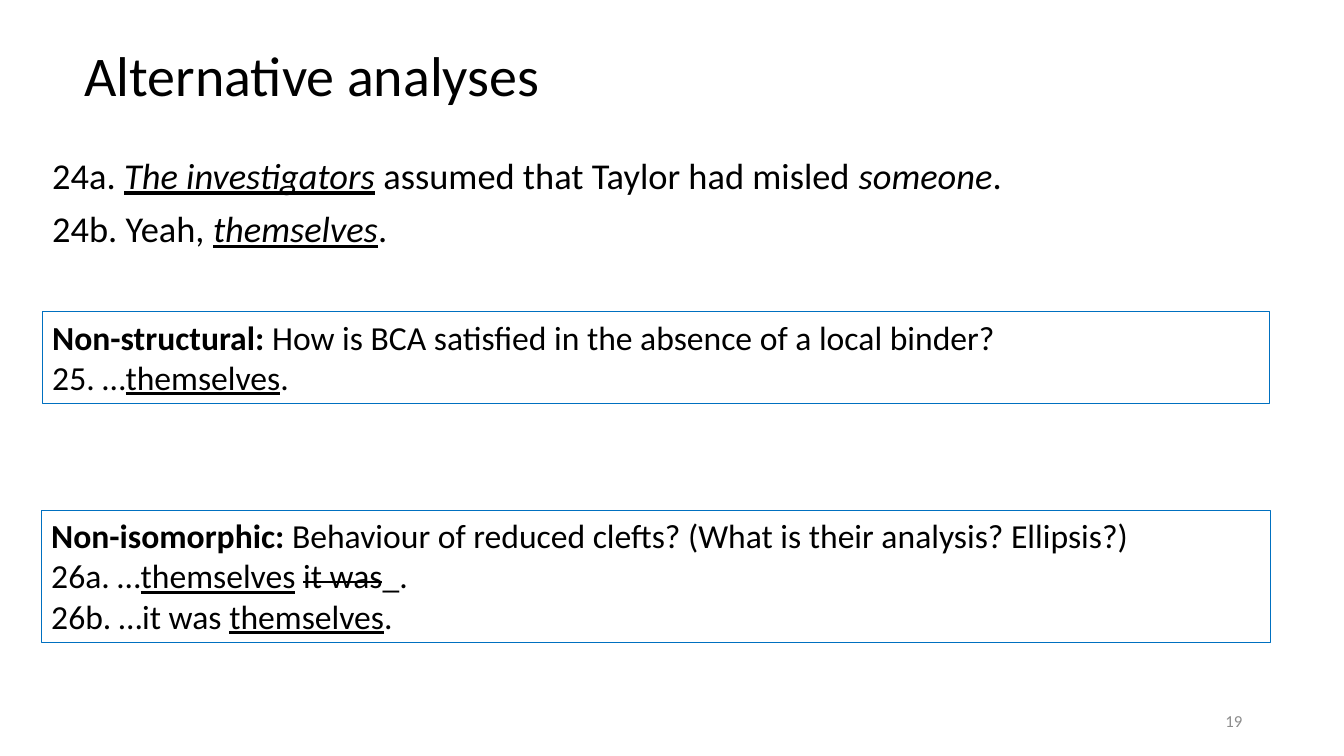
from dataclasses import dataclass
from typing import NamedTuple

from pptx import Presentation
from pptx.dml.color import RGBColor
from pptx.enum.shapes import MSO_SHAPE
from pptx.enum.text import MSO_ANCHOR as Anchor, PP_ALIGN as Align
from pptx.util import Emu, Pt

EMU_PER_PX = 9144  # 100 px to the inch


@dataclass(frozen=True)
class Theme:
    font: str = "Calibri"
    ink: RGBColor = RGBColor(0x00, 0x00, 0x00)
    muted: RGBColor = RGBColor(0x8C, 0x8C, 0x8C)
    outline: RGBColor = RGBColor(0x00, 0x70, 0xC0)
    outline_pt: float = 0.75
    title_pt: int = 40
    example_pt: int = 26
    analysis_pt: int = 24
    number_pt: int = 12


class Span(NamedTuple):
    text: str
    bold: bool = False
    italic: bool = False
    underline: bool = False
    strike: bool = False


class Box(NamedTuple):
    left: int
    top: int
    width: int
    height: int


Line = list[Span]


@dataclass(frozen=True)
class TextBlock:
    box: Box
    lines: list[Line]
    size: int
    color: RGBColor
    outlined: bool = False
    anchor: Anchor = Anchor.TOP
    align: Align = Align.LEFT
    line_spacing: float = 1.0
    space_before: int = 0


def px(length: int) -> Emu:
    return Emu(length * EMU_PER_PX)


def add_span(paragraph, span: Span, block: TextBlock, theme: Theme) -> None:
    run = paragraph.add_run()
    run.text = span.text
    font = run.font
    font.name, font.size = theme.font, Pt(block.size)
    font.color.rgb = block.color
    font.bold, font.italic, font.underline = span.bold, span.italic, span.underline
    if span.strike:
        run._r.get_or_add_rPr().set("strike", "sngStrike")


def add_block(slide, block: TextBlock, theme: Theme) -> None:
    area = [px(length) for length in block.box]
    if block.outlined:
        holder = slide.shapes.add_shape(MSO_SHAPE.RECTANGLE, *area)
        holder.shadow.inherit = False
        holder.fill.background()
        holder.line.color.rgb = theme.outline
        holder.line.width = Pt(theme.outline_pt)
    else:
        holder = slide.shapes.add_textbox(*area)
    frame = holder.text_frame
    frame.word_wrap = True
    frame.vertical_anchor = block.anchor
    for index, line in enumerate(block.lines):
        paragraph = frame.add_paragraph() if index else frame.paragraphs[0]
        paragraph.alignment = block.align
        paragraph.line_spacing = block.line_spacing
        paragraph.space_before = Pt(block.space_before)
        for span in line:
            add_span(paragraph, span, block, theme)


def slide_blocks(theme: Theme) -> list[TextBlock]:
    anaphor = Span("themselves", underline=True)
    stop = Span(".")

    # Heading and page number
    title = TextBlock(
        Box(74, 35, 1186, 85), [[Span("Alternative analyses")]],
        theme.title_pt, theme.ink, anchor=Anchor.MIDDLE, line_spacing=0.9)
    page_number = TextBlock(
        Box(942, 695, 300, 40), [[Span("19")]],
        theme.number_pt, theme.muted, anchor=Anchor.MIDDLE, align=Align.RIGHT)

    # Dialogue under discussion
    dialogue = TextBlock(
        Box(42, 152, 1264, 543),
        [
            [Span("24a. "), Span("The investigators", italic=True, underline=True),
             Span(" assumed that Taylor had misled "),
             Span("someone", italic=True), stop],
            [Span("24b. Yeah, "), anaphor._replace(italic=True), stop],
        ],
        theme.example_pt, theme.ink, line_spacing=0.9, space_before=10)

    # Competing analyses
    non_isomorphic = TextBlock(
        Box(41, 506, 1219, 131),
        [
            [Span("Non-isomorphic: ", bold=True),
             Span("Behaviour of reduced clefts? (What is their analysis? Ellipsis?)")],
            [Span("26a. …"), anaphor, Span(" "), Span("it was", strike=True), Span("_.")],
            [Span("26b. …it was "), anaphor, stop],
        ],
        theme.analysis_pt, theme.ink, outlined=True)
    non_structural = TextBlock(
        Box(42, 309, 1217, 91),
        [
            [Span("Non-structural: ", bold=True),
             Span("How is BCA satisfied in the absence of a local binder?")],
            [Span("25. …"), anaphor, stop],
        ],
        theme.analysis_pt, theme.ink, outlined=True)
    return [dialogue, page_number, title, non_isomorphic, non_structural]


def main() -> None:
    theme = Theme()
    deck = Presentation()
    deck.slide_width, deck.slide_height = px(1333), px(750)
    slide = deck.slides.add_slide(deck.slide_layouts[6])
    for block in slide_blocks(theme):
        add_block(slide, block, theme)
    deck.save("out.pptx")


if __name__ == "__main__":
    main()
